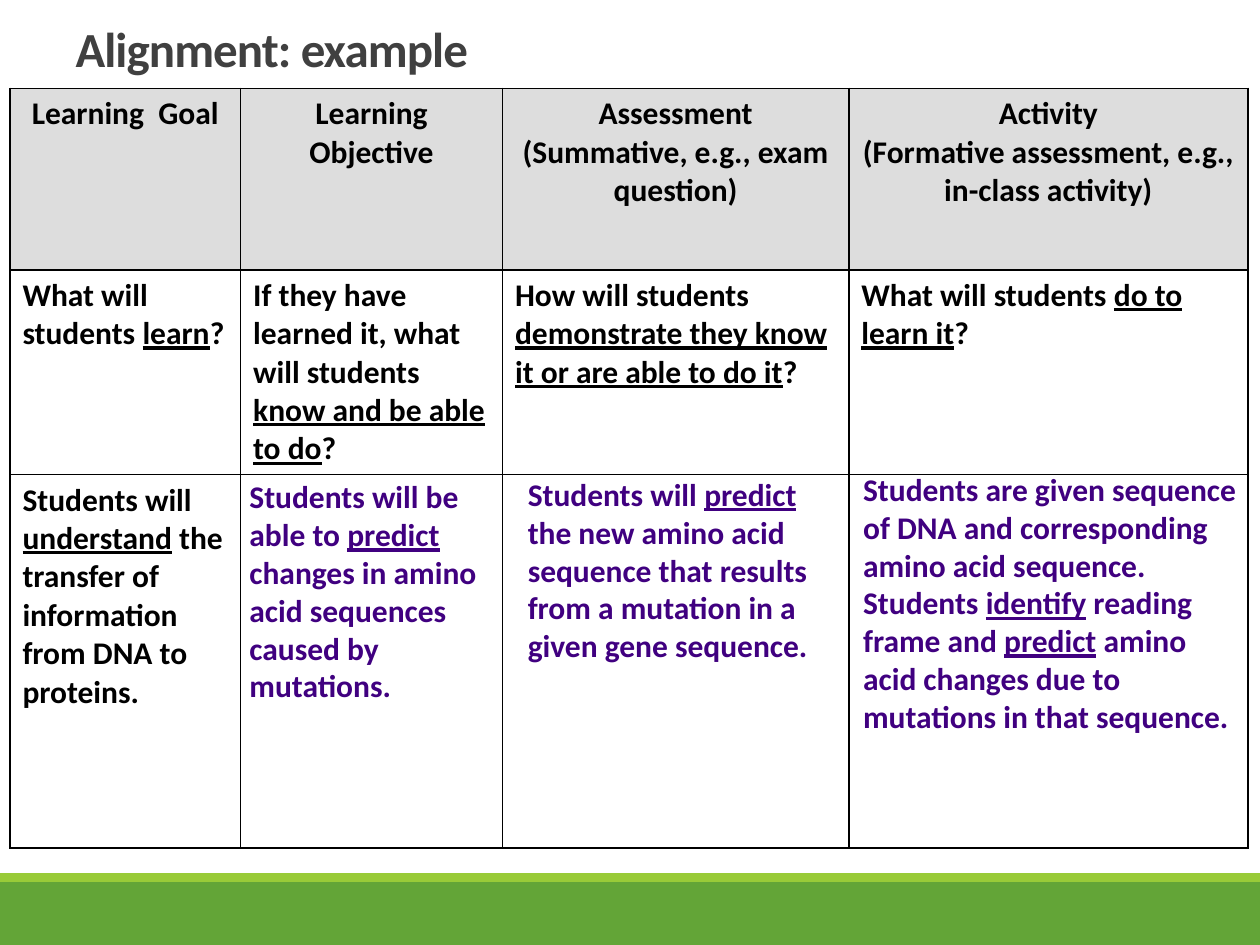
from dataclasses import dataclass

from lxml.etree import SubElement
from pptx import Presentation
from pptx.dml.color import RGBColor
from pptx.enum.shapes import MSO_SHAPE
from pptx.enum.text import MSO_ANCHOR, MSO_AUTO_SIZE, PP_ALIGN
from pptx.oxml.ns import qn
from pptx.util import Cm, Pt

FONT = "Calibri"
BLACK, GREY, PURPLE = "000000", "DDDDDD", "400080"


@dataclass
class Band:
    top: float
    height: float
    color: str


@dataclass
class Answer:
    """Text laid over an empty table cell; lengths in cm."""
    left: float
    top: float
    width: float
    height: float
    text: str


# Content: underscores enclose underlined words
BANDS = [Band(17.78, 1.27, "63A537"), Band(17.6, 0.18, "99CB38")]
COLUMN_WIDTHS = [4.65, 5.28, 6.98, 8.05]
ROW_HEIGHTS = [3.66, 3.94, 7.52]
ROWS = [
    ["Learning  Goal", "Learning Objective",
     "Assessment\n(Summative, e.g., exam question)",
     "Activity\n(Formative assessment, e.g., in-class activity)"],
    ["What will students _learn_?",
     "If they have learned it, what will students _know and be able to do_?",
     "How will students _demonstrate they know it or are able to do it_?",
     "What will students _do to learn it_?"],
    ["Students will _understand_ the transfer of information from DNA to proteins.",
     "", "", ""],
]
ANSWERS = [
    Answer(10.39, 9.45, 6.55, 4.88,
           "Students will _predict_ the new amino acid sequence that results "
           "from a mutation in a given gene sequence."),
    Answer(17.15, 9.35, 8.05, 5.64,
           "Students are given sequence of DNA and corresponding amino acid sequence. "
           "Students _identify_ reading frame and _predict_ amino acid changes due to "
           "mutations in that sequence."),
    Answer(4.78, 9.5, 5.61, 5.64,
           "Students will be able to _predict _changes in amino acid sequences "
           "caused by mutations."),
]


def rgb(color: str) -> RGBColor:
    return RGBColor.from_string(color)


def set_font(paragraph, size: float, color: str) -> None:
    font = paragraph.font
    font.name, font.size, font.bold = FONT, Pt(size), True
    font.color.rgb = rgb(color)


def write(frame, text: str, color: str, align=PP_ALIGN.LEFT) -> None:
    for index, line in enumerate(text.split("\n")):
        paragraph = frame.add_paragraph() if index else frame.paragraphs[0]
        paragraph.alignment = align
        set_font(paragraph, 18, color)
        for position, part in enumerate(line.split("_")):
            if part:
                run = paragraph.add_run()
                run.text = part
                if position % 2:
                    run.font.underline = True


def add_borders(cell, color: str) -> None:
    properties = cell._tc.get_or_add_tcPr()
    for side in ("a:lnL", "a:lnR", "a:lnT", "a:lnB"):
        border = SubElement(properties, qn(side), w=str(Pt(1)))
        fill = SubElement(border, qn("a:solidFill"))
        SubElement(fill, qn("a:srgbClr"), val=color)


def add_band(slide, band: Band) -> None:
    bar = slide.shapes.add_shape(MSO_SHAPE.RECTANGLE, 0, Cm(band.top),
                                 Cm(25.4), Cm(band.height))
    bar.shadow.inherit = False
    bar.fill.solid()
    bar.fill.fore_color.rgb = rgb(band.color)
    bar.line.fill.background()


def add_title(slide, text: str) -> None:
    title = slide.shapes.title
    title.left, title.top, title.width, title.height = Cm(1.27), Cm(0), Cm(22.86), Cm(1.7)
    frame = title.text_frame
    frame.text = text
    frame.auto_size = MSO_AUTO_SIZE.NONE
    frame.vertical_anchor = MSO_ANCHOR.BOTTOM
    paragraph = frame.paragraphs[0]
    paragraph.alignment = PP_ALIGN.LEFT
    paragraph.line_spacing = 0.85
    set_font(paragraph, 28, "404040")
    paragraph.runs[0]._r.get_or_add_rPr().set("spc", "-50")


def add_alignment_table(slide) -> None:
    table = slide.shapes.add_table(
        len(ROWS), len(COLUMN_WIDTHS), Cm(0.2), Cm(1.78),
        Cm(sum(COLUMN_WIDTHS)), Cm(sum(ROW_HEIGHTS))).table
    table.first_row = table.horz_banding = False
    for column, width in zip(table.columns, COLUMN_WIDTHS):
        column.width = Cm(width)
    for row_index, (row, height) in enumerate(zip(table.rows, ROW_HEIGHTS)):
        row.height = Cm(height)
        is_header = row_index == 0
        for cell, text in zip(row.cells, ROWS[row_index]):
            add_borders(cell, BLACK)
            if is_header:
                cell.fill.solid()
                cell.fill.fore_color.rgb = rgb(GREY)
            else:
                cell.fill.background()
            write(cell.text_frame, text, BLACK,
                  PP_ALIGN.CENTER if is_header else PP_ALIGN.LEFT)


def add_answer(slide, answer: Answer) -> None:
    frame = slide.shapes.add_textbox(Cm(answer.left), Cm(answer.top),
                                     Cm(answer.width), Cm(answer.height)).text_frame
    frame.word_wrap = True
    frame.auto_size = MSO_AUTO_SIZE.SHAPE_TO_FIT_TEXT
    write(frame, answer.text, PURPLE)


def main() -> None:
    presentation = Presentation()
    presentation.slide_width, presentation.slide_height = Cm(25.4), Cm(19.05)
    slide = presentation.slides.add_slide(presentation.slide_layouts[5])

    # Green footer bands
    for band in BANDS:
        add_band(slide, band)

    # Title and table
    add_title(slide, "Alignment: example")
    add_alignment_table(slide)

    # Answers over the last row
    for answer in ANSWERS:
        add_answer(slide, answer)

    presentation.save("out.pptx")


if __name__ == "__main__":
    main()
